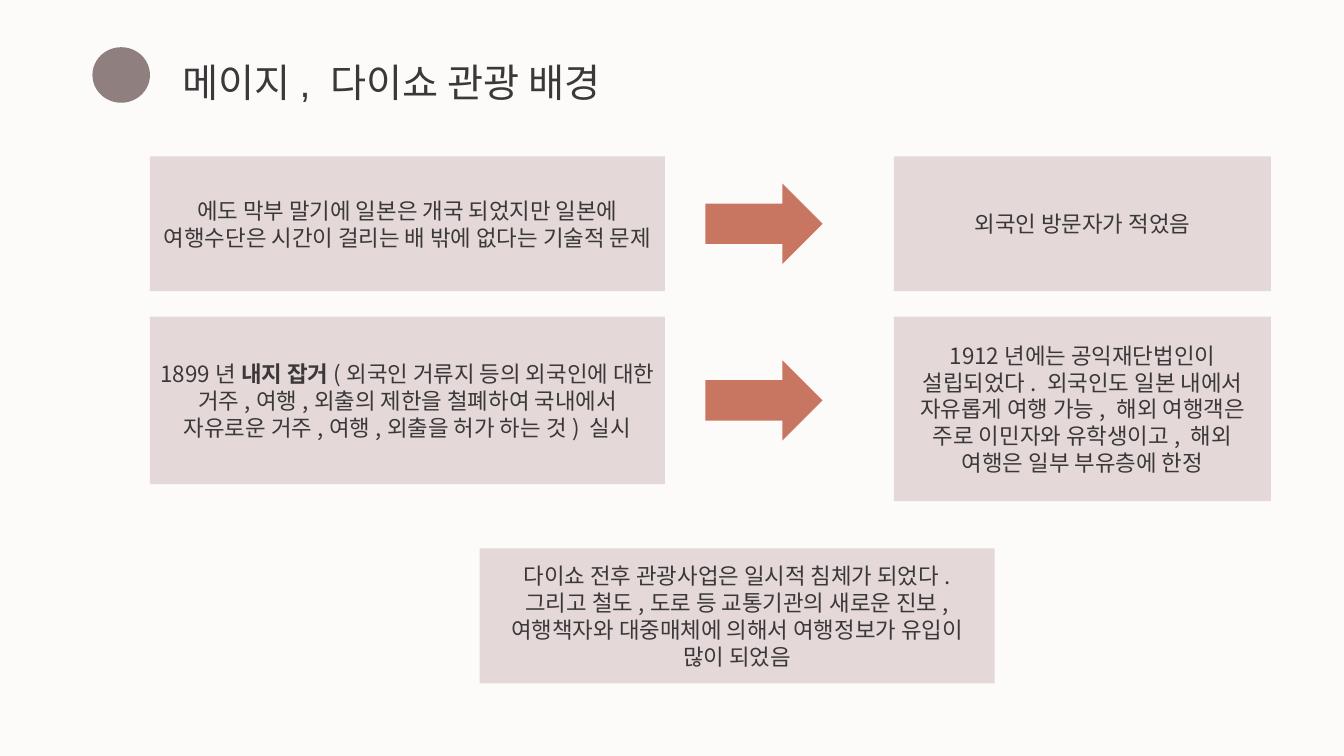
from lxml.etree import SubElement
from pptx import Presentation
from pptx.dml.color import RGBColor
from pptx.enum.shapes import MSO_SHAPE as Preset
from pptx.enum.text import MSO_ANCHOR as Anchor, MSO_AUTO_SIZE as AutoSize, PP_ALIGN as Align
from pptx.oxml.ns import qn
from pptx.util import Cm, Pt

BACKGROUND = RGBColor(0xFC, 0xFB, 0xFA)
INK = RGBColor(0x3A, 0x38, 0x38)
MAUVE = RGBColor(0x8F, 0x80, 0x7F)
BLUSH = RGBColor(0xE4, 0xD9, 0xD8)
TERRACOTTA = RGBColor(0xC8, 0x76, 0x61)
BODY_FONT = "Noto Sans CJK KR"

CAUSE_LEFT, CAUSE_WIDTH = 3.78, 12.98
RESULT_LEFT, RESULT_WIDTH = 22.53, 9.5
ARROW_LEFT, ARROW_WIDTH, ARROW_HEIGHT = 17.78, 2.95, 2.03
BOX_HEIGHT = 3.4

FLOWS = [
    (3.94, BOX_HEIGHT, BOX_HEIGHT,
     ["에도 막부 말기에 일본은 개국 되었지만 일본에 여행수단은 시간이 걸리는 배 밖에 없다는 기술적 문제"],
     ["외국인 방문자가 적었음"]),
    (7.98, 4.22, 4.65,
     ["1899년 ", "내지 잡거",
      "(외국인 거류지 등의 외국인에 대한 거주,여행,외출의 제한을 철폐하여 국내에서 "
      "자유로운 거주,여행,외출을 허가 하는 것) 실시"],
     ["1912년에는 공익재단법인이 설립되었다. 외국인도 일본 내에서 자유롭게 여행 가능, "
      "해외 여행객은 주로 이민자와 유학생이고, 해외 여행은 일부 부유층에 한정"]),
]
OUTCOME = ["다이쇼 전후 관광사업은 일시적 침체가 되었다. 그리고 철도,도로 등 교통기관의 새로운 진보, "
           "여행책자와 대중매체에 의해서 여행정보가 유입이 많이 되었음"]


def style_font(font, name, size):
    """Set the Latin and East Asian typeface, size and ink colour."""
    font.name, font.size = name, Pt(size)
    font.color.rgb = INK
    SubElement(font._element, qn("a:ea"), typeface=BODY_FONT)


def add_figure(slide, preset, color, left, top, width, height):
    """Add a flat preset shape, measured in centimetres."""
    figure = slide.shapes.add_shape(preset, Cm(left), Cm(top), Cm(width), Cm(height))
    figure.shadow.inherit = False
    figure.fill.solid()
    figure.fill.fore_color.rgb = color
    figure.line.fill.background()
    return figure


def add_statement(slide, phrases, left, top, width, height):
    """Add a centred text panel in which every second phrase is bold."""
    panel = add_figure(slide, Preset.RECTANGLE, BLUSH, left, top, width, height)
    panel.text_frame.word_wrap = True
    panel.text_frame.vertical_anchor = Anchor.MIDDLE
    statement = panel.text_frame.paragraphs[0]
    statement.alignment = Align.CENTER
    style_font(statement.font, BODY_FONT, 16)
    for index, phrase in enumerate(phrases):
        run = statement.add_run()
        run.text = phrase
        if index % 2:
            run.font.bold = True


def add_flow(slide, top, cause_height, result_height, cause, result):
    """Add a cause, an arrow level with its middle, and the result."""
    add_statement(slide, cause, CAUSE_LEFT, top, CAUSE_WIDTH, cause_height)
    add_figure(slide, Preset.RIGHT_ARROW, TERRACOTTA, ARROW_LEFT,
               top + (cause_height - ARROW_HEIGHT) / 2, ARROW_WIDTH, ARROW_HEIGHT)
    add_statement(slide, result, RESULT_LEFT, top, RESULT_WIDTH, result_height)


def set_title(slide, wording):
    """Place and format the title placeholder."""
    title = slide.shapes.title
    title.left, title.top, title.width, title.height = Cm(4.34), Cm(1.35), Cm(11.58), Cm(1.45)
    frame = title.text_frame
    frame.text = wording
    frame.word_wrap = False
    frame.auto_size = AutoSize.SHAPE_TO_FIT_TEXT
    frame.vertical_anchor = Anchor.TOP
    heading = frame.paragraphs[0]
    heading.alignment = Align.LEFT
    style_font(heading.font, "Arial", 28)


def main():
    """Build the slide and save it."""
    deck = Presentation()
    deck.slide_width, deck.slide_height = Cm(33.87), Cm(19.05)
    slide = deck.slides.add_slide(deck.slide_layouts[5])
    slide.background.fill.solid()
    slide.background.fill.fore_color.rgb = BACKGROUND
    add_figure(slide, Preset.OVAL, MAUVE, 2.33, 1.19, 1.45, 1.4)
    set_title(slide, "메이지, 다이쇼 관광 배경")
    for flow in FLOWS:
        add_flow(slide, *flow)
    add_statement(slide, OUTCOME, 12.09, 13.82, CAUSE_WIDTH, BOX_HEIGHT)
    deck.save("out.pptx")


if __name__ == "__main__":
    main()
